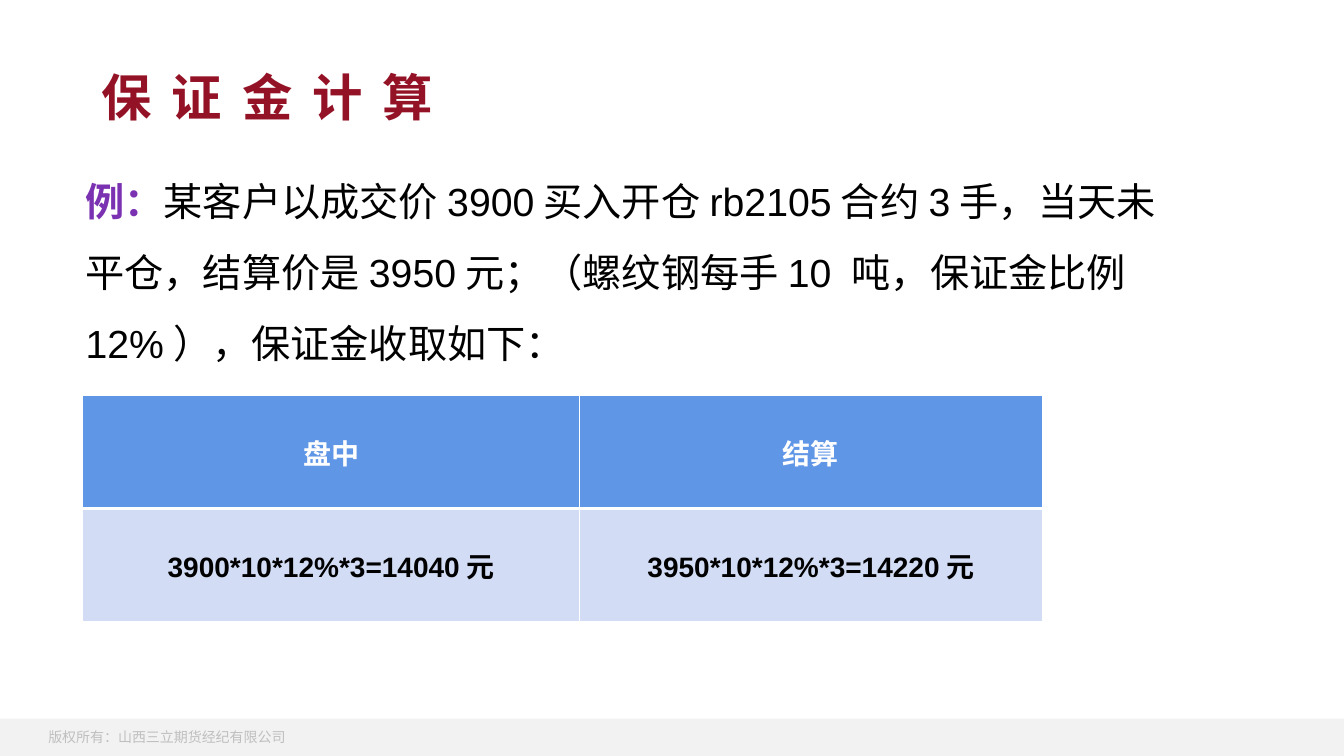
import pptx
import pptx.util
import pptx.oxml
import pptx.oxml.ns
import pptx.dml.color
import pptx.enum.shapes
import pptx.enum.text
from lxml import etree

Pt = pptx.util.Pt
qn = pptx.oxml.ns.qn
ALIGN = pptx.enum.text.PP_ALIGN
ANCHOR = pptx.enum.text.MSO_ANCHOR
COLORS = {
    "white": "FFFFFF", "black": "000000", "red": "941225",
    "purple": "7B32B2", "dark_purple": "401A5D", "header": "6096E6",
    "body": "D2DDF5", "band": "F2F2F2", "footer": "BFBFBF",
}


def color(name):
    return pptx.dml.color.RGBColor.from_string(COLORS[name])


def add_span(para, text, size=20, bold=False, fill="black", font="Arial"):
    span = para.add_run()
    span.text = text
    span.font.size = Pt(size)
    span.font.bold = bold
    span.font.name = font
    span.font.color.rgb = color(fill)
    east_asian = etree.Element(qn("a:ea"), typeface="Noto Sans CJK SC")
    span.font._element.find(qn("a:latin")).addnext(east_asian)
    return span


deck = pptx.Presentation()
deck.slide_width = Pt(960)
deck.slide_height = Pt(540)
page = deck.slides.add_slide(deck.slide_layouts[5])

band = page.shapes.add_shape(
    pptx.enum.shapes.MSO_SHAPE.RECTANGLE, Pt(0), Pt(513.4), Pt(960), Pt(26.6))
band.shadow.inherit = False
band.fill.solid()
band.fill.fore_color.rgb = color("band")
band.line.fill.background()

footer = page.shapes.add_textbox(Pt(27.4), Pt(517), Pt(265), Pt(19.4))
footer.text_frame.word_wrap = True
add_span(footer.text_frame.paragraphs[0], "版权所有：山西三立期货经纪有限公司",
         size=10, fill="footer", font="Noto Sans CJK SC")

example = page.shapes.add_textbox(Pt(54), Pt(106.6), Pt(790.6), Pt(160))
example.fill.solid()
example.fill.fore_color.rgb = color("white")
example.text_frame.word_wrap = True
para = example.text_frame.paragraphs[0]
para.line_spacing = 1.5
label = add_span(para, "例：", size=28, bold=True, fill="purple")
label.font.fill.gradient()
label.font.fill.gradient_angle = 0
for stop, name in zip(label.font.fill.gradient_stops, ("purple", "dark_purple")):
    stop.color.rgb = color(name)
add_span(para, "某客户以成交价3900买入开仓rb2105合约3手，当天未平仓，结算价是3950元；"
         "（螺纹钢每手10 吨，保证金比例12%），保证金收取如下：", size=28)

title = page.shapes.title
title.left, title.top, title.width, title.height = Pt(65.5), Pt(41), Pt(413.3), Pt(55.4)
title.text_frame.vertical_anchor = ANCHOR.MIDDLE
title.text_frame.word_wrap = True
para = title.text_frame.paragraphs[0]
para.alignment = ALIGN.LEFT
heading = add_span(para, "保 证 金 计 算", size=36, bold=True, fill="red")
heading.font._element.set("spc", "300")

rows = [
    ("header", "white", ("盘中", "结算")),
    ("body", "black", ("3900*10*12%*3=14040元", "3950*10*12%*3=14220元")),
]
table = page.shapes.add_table(2, 2, Pt(59), Pt(282.4), Pt(685.5), Pt(161.6)).table
table.columns[0].width, table.columns[1].width = Pt(355), Pt(330.5)
for row_index, (fill, text_color, texts) in enumerate(rows):
    table.rows[row_index].height = Pt(80.8)
    thick_side = ("lnB", "lnT")[row_index]
    for column_index, text in enumerate(texts):
        cell = table.cell(row_index, column_index)
        cell.vertical_anchor = ANCHOR.MIDDLE
        cell.fill.solid()
        cell.fill.fore_color.rgb = color(fill)
        para = cell.text_frame.paragraphs[0]
        para.alignment = ALIGN.CENTER
        add_span(para, text, bold=True, fill=text_color)
        properties = cell._tc.get_or_add_tcPr()
        for index, side in enumerate(("lnL", "lnR", "lnT", "lnB")):
            width = Pt(3 if side == thick_side else 1)
            border = etree.Element(qn("a:" + side), w=str(int(width)))
            solid = etree.SubElement(border, qn("a:solidFill"))
            etree.SubElement(solid, qn("a:srgbClr"), val=COLORS["white"])
            properties.insert(index, border)

deck.save("out.pptx")
